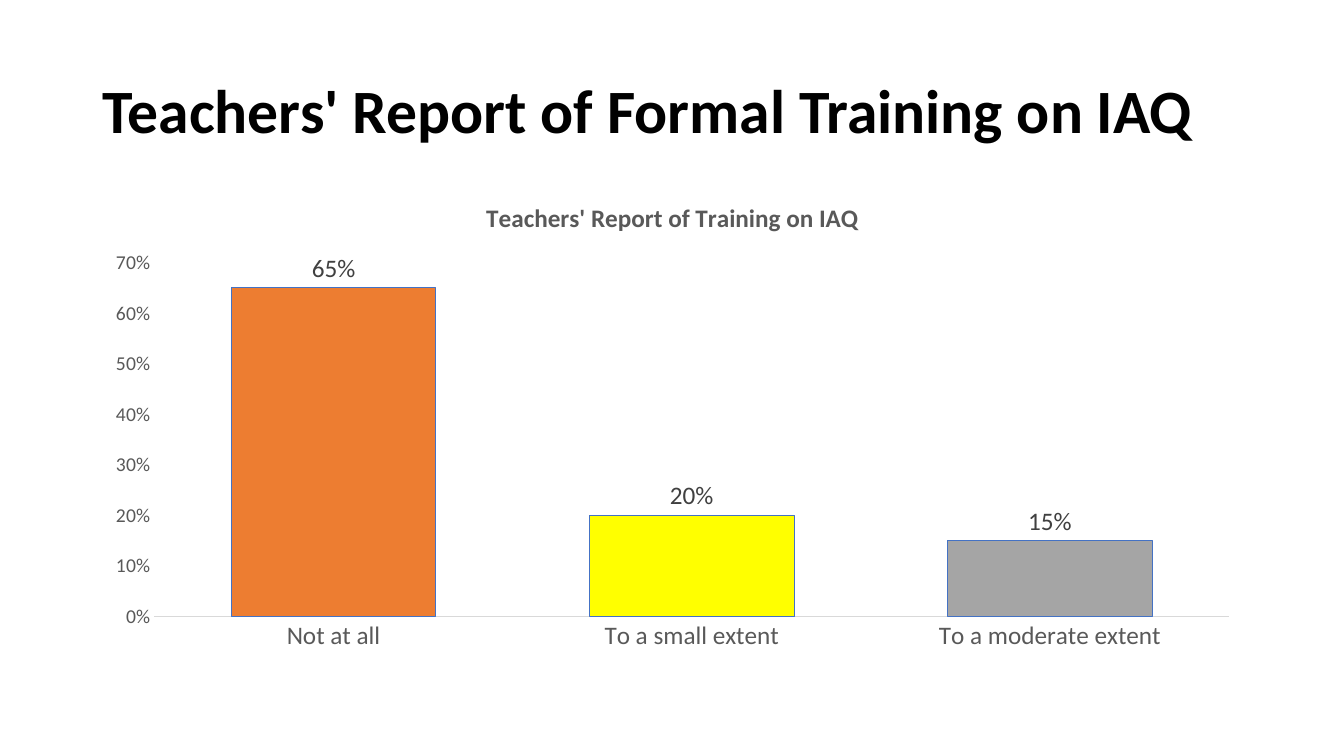
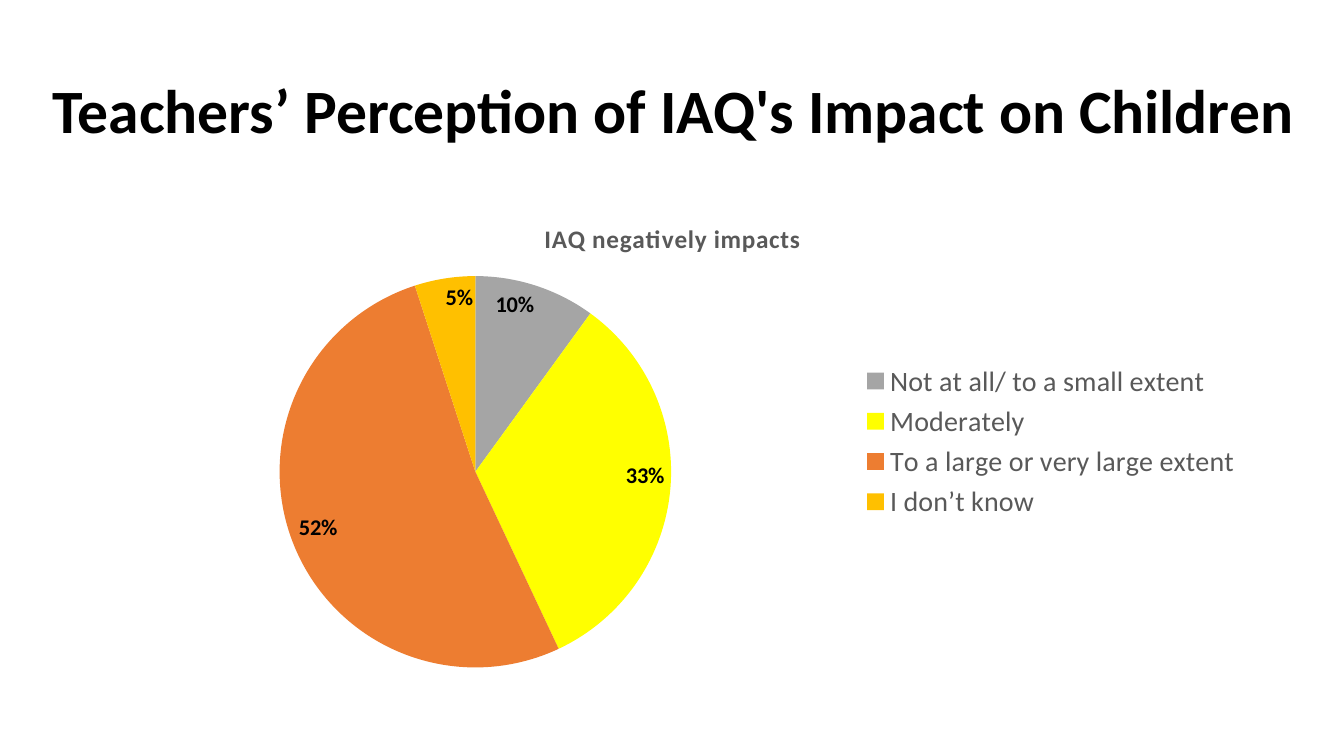
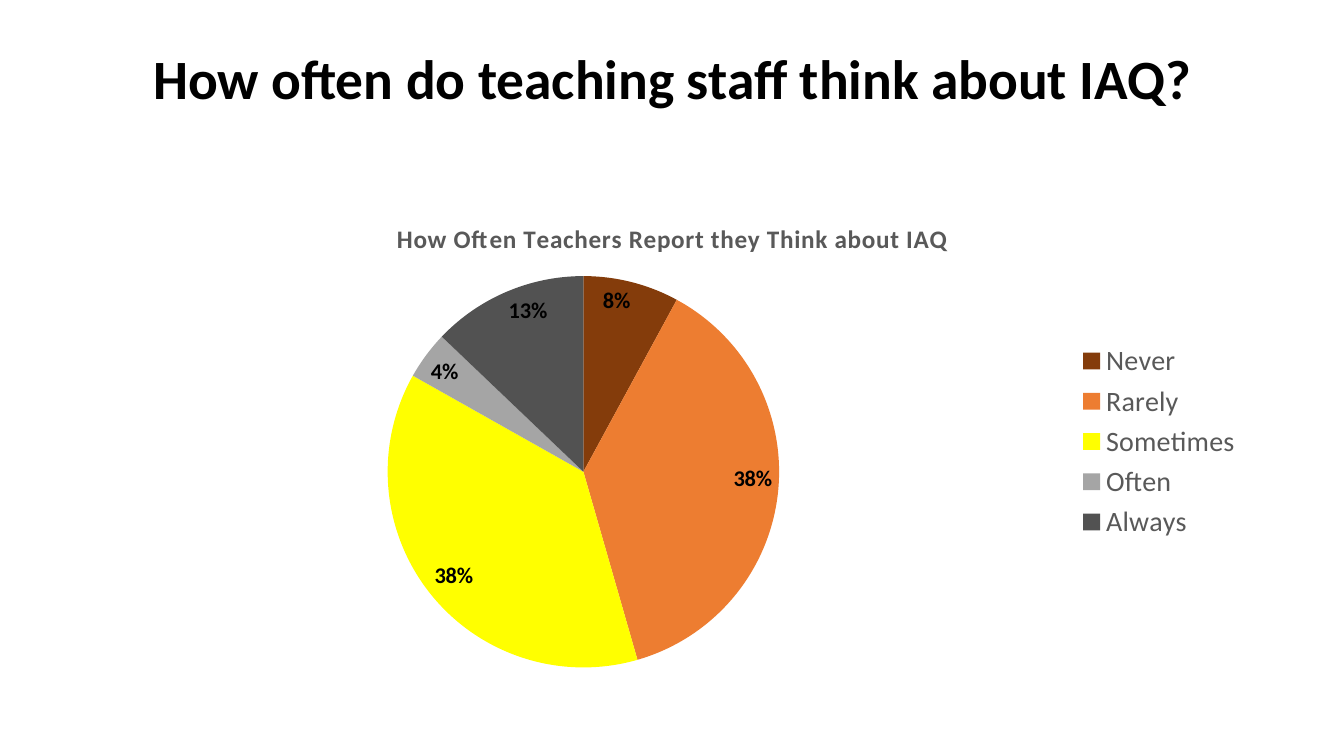
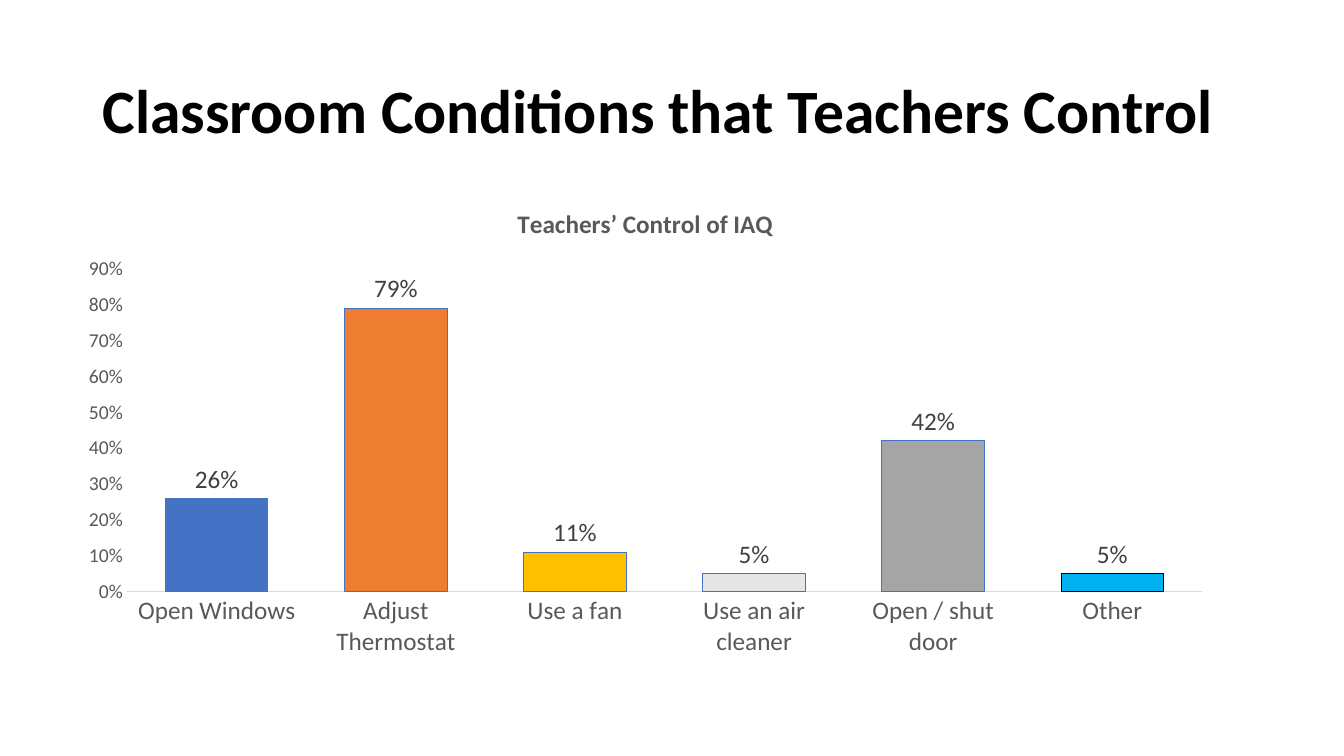
from pptx import Presentation
from pptx.chart.data import CategoryChartData
from pptx.dml.color import RGBColor
from pptx.enum.chart import (
    XL_CHART_TYPE as ChartType,
    XL_LABEL_POSITION as LabelPosition,
    XL_LEGEND_POSITION as LegendPosition,
    XL_TICK_MARK as TickMark,
)
from pptx.enum.text import MSO_ANCHOR, PP_ALIGN
from pptx.util import Inches, Pt

FONT = "Calibri"
BLACK = RGBColor(0x00, 0x00, 0x00)
TEXT_GRAY = RGBColor(0x59, 0x59, 0x59)
LABEL_GRAY = RGBColor(0x40, 0x40, 0x40)
AXIS_GRAY = RGBColor(0xD9, 0xD9, 0xD9)
BLUE = RGBColor(0x44, 0x72, 0xC4)
ORANGE = RGBColor(0xED, 0x7D, 0x31)
YELLOW = RGBColor(0xFF, 0xFF, 0x00)
GRAY = RGBColor(0xA5, 0xA5, 0xA5)
GOLD = RGBColor(0xFF, 0xC0, 0x00)
LIGHT_GRAY = RGBColor(0xE7, 0xE6, 0xE6)
DARK_GRAY = RGBColor(0x52, 0x52, 0x52)
BROWN = RGBColor(0x84, 0x3C, 0x0B)
SKY_BLUE = RGBColor(0x00, 0xB0, 0xF0)

LEFT, WIDTH = 0.92, 11.5
TITLE_TOP, TITLE_HEIGHT = 0.4, 1.45
CHART_HEIGHT = 4.76
PIE_TOP = 2
PERCENT = "0%"


def style_font(font, size, color, bold=False):
    font.name = FONT
    font.size = Pt(size)
    font.bold = bold
    font.color.rgb = color


def add_title(slide, text, left=LEFT, top=TITLE_TOP, width=WIDTH, size=44,
              align=PP_ALIGN.LEFT):
    box = slide.shapes.add_textbox(
        Inches(left), Inches(top), Inches(width), Inches(TITLE_HEIGHT))
    frame = box.text_frame
    frame.word_wrap = True
    frame.vertical_anchor = MSO_ANCHOR.MIDDLE
    paragraph = frame.paragraphs[0]
    paragraph.alignment = align
    paragraph.line_spacing = 0.9
    run = paragraph.add_run()
    run.text = text
    style_font(run.font, size, BLACK, bold=True)


def add_chart(slide, chart_type, title, rows, left, top):
    """Add a one-series chart; each row is a category, a value and a colour."""
    categories, values, colors = zip(*rows)
    data = CategoryChartData()
    data.categories = categories
    data.add_series("Series 1", values)
    chart = slide.shapes.add_chart(
        chart_type, Inches(left), Inches(top), Inches(WIDTH),
        Inches(CHART_HEIGHT), data).chart
    style_font(chart.font, 10, BLACK)

    chart.has_title = True
    run = chart.chart_title.text_frame.paragraphs[0].add_run()
    run.text = title
    style_font(run.font, 18, TEXT_GRAY, bold=True)
    chart.chart_title.include_in_layout = False

    for index, color in enumerate(colors):
        fill = chart.plots[0].series[0].points[index].format.fill
        fill.solid()
        fill.fore_color.rgb = color
    return chart


def add_labels(plot, size, color, position, bold=False):
    plot.has_data_labels = True
    labels = plot.data_labels
    labels.number_format = PERCENT
    labels.number_format_is_linked = False
    labels.position = position
    style_font(labels.font, size, color, bold)
    return labels


def style_axis(axis, size):
    axis.has_major_gridlines = False
    axis.major_tick_mark = TickMark.NONE
    axis.minor_tick_mark = TickMark.NONE
    style_font(axis.tick_labels.font, size, TEXT_GRAY)


def add_column_chart(slide, title, rows, maximum, left, top, outlines=None):
    """Outlines gives the line colour of bars that differ from blue."""
    chart = add_chart(slide, ChartType.COLUMN_CLUSTERED, title, rows, left, top)
    chart.has_legend = False
    plot = chart.plots[0]
    plot.gap_width = 75
    plot.vary_by_categories = False
    series = plot.series[0]
    for index in range(len(rows)):
        line = series.points[index].format.line
        line.color.rgb = (outlines or {}).get(index, BLUE)
        line.width = Pt(0.75)
    labels = add_labels(plot, 18, LABEL_GRAY, LabelPosition.OUTSIDE_END)
    labels.show_value = True

    style_axis(chart.category_axis, 18)
    chart.category_axis.format.line.color.rgb = AXIS_GRAY
    chart.category_axis.format.line.width = Pt(0.75)
    value_axis = chart.value_axis
    style_axis(value_axis, 14)
    value_axis.format.line.fill.background()
    value_axis.minimum_scale = 0
    value_axis.maximum_scale = maximum
    value_axis.major_unit = 0.1
    value_axis.tick_labels.number_format = PERCENT
    value_axis.tick_labels.number_format_is_linked = False


def add_pie_chart(slide, title, rows):
    chart = add_chart(slide, ChartType.PIE, title, rows, LEFT, PIE_TOP)
    title_run = chart.chart_title.text_frame.paragraphs[0].runs[0]
    title_run.font._element.set("spc", "50")
    plot = chart.plots[0]
    plot.vary_by_categories = True
    labels = add_labels(plot, 16, BLACK, LabelPosition.INSIDE_END, bold=True)
    labels.show_percentage = True
    labels.show_value = False
    chart.has_legend = True
    chart.legend.position = LegendPosition.RIGHT
    chart.legend.include_in_layout = False
    style_font(chart.legend.font, 20, TEXT_GRAY)


def build_training(slide):
    add_title(slide, "Teachers' Report of Formal Training on IAQ")
    add_column_chart(slide, "Teachers' Report of Training on IAQ", [
        ("Not at all", 0.65, ORANGE),
        ("To a small extent", 0.20, YELLOW),
        ("To a moderate extent", 0.15, GRAY),
    ], maximum=0.7, left=LEFT, top=1.79)


def build_impact(slide):
    add_title(slide, "Teachers’ Perception of IAQ's Impact on Children",
              left=0.17, width=13.03, align=PP_ALIGN.CENTER)
    add_pie_chart(slide, "IAQ negatively impacts", [
        ("Not at all/ to a small extent", 10, GRAY),
        ("Moderately", 33, YELLOW),
        ("To a large or very large extent", 52, ORANGE),
        ("I don’t know", 5, GOLD),
    ])


def build_frequency(slide):
    add_title(slide, "How often do teaching staff think about IAQ?",
              top=0.08, size=39.6, align=PP_ALIGN.CENTER)
    add_pie_chart(slide, "How Often Teachers Report they Think about IAQ", [
        ("Never", 8, BROWN),
        ("Rarely", 38, ORANGE),
        ("Sometimes", 38, YELLOW),
        ("Often", 4, GRAY),
        ("Always", 13, DARK_GRAY),
    ])


def build_control(slide):
    add_title(slide, "Classroom Conditions that Teachers Control")
    add_column_chart(slide, "Teachers’ Control of IAQ", [
        ("Open Windows", 0.26, BLUE),
        ("Adjust Thermostat", 0.79, ORANGE),
        ("Use a fan", 0.11, GOLD),
        ("Use an air cleaner", 0.05, LIGHT_GRAY),
        ("Open / shut door", 0.42, GRAY),
        ("Other", 0.05, SKY_BLUE),
    ], maximum=0.9, left=0.65, top=1.85, outlines={5: BLACK})


def main():
    presentation = Presentation()
    presentation.slide_width = Inches(13.33)
    presentation.slide_height = Inches(7.5)
    blank = presentation.slide_layouts[6]
    for build in (build_training, build_impact, build_frequency, build_control):
        build(presentation.slides.add_slide(blank))
    presentation.save("out.pptx")


if __name__ == "__main__":
    main()
